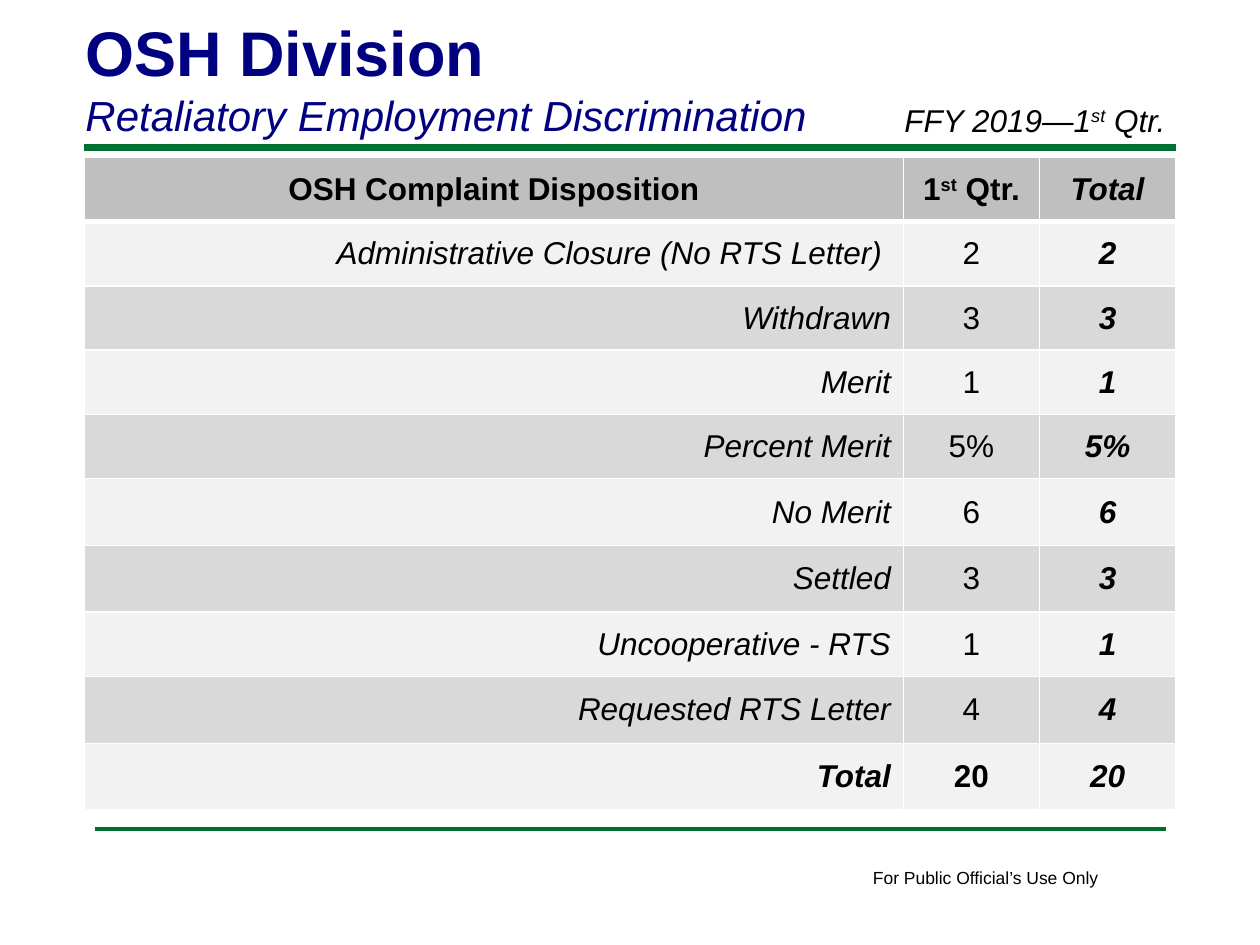
"""Build the OSH Division slide on retaliatory employment discrimination complaints."""
from dataclasses import dataclass
from typing import NamedTuple

from lxml.etree import SubElement
from pptx import Presentation
from pptx.dml.color import RGBColor
from pptx.enum.shapes import MSO_CONNECTOR as Connector
from pptx.enum.text import MSO_ANCHOR as Anchor, MSO_AUTO_SIZE as AutoSize, PP_ALIGN as Align
from pptx.oxml.ns import qn
from pptx.util import Inches, Pt


@dataclass(frozen=True)
class Theme:
    font: str = "Arial"
    black: str = "000000"
    navy: str = "000080"
    green: str = "007030"
    white: str = "FFFFFF"
    header_fill: str = "BFBFBF"
    band_fills: tuple = ("F2F2F2", "D9D9D9")
    title_size: int = 36
    subtitle_size: int = 24
    body_size: int = 18
    footer_size: int = 10
    border: int = 1
    header_border: int = 3


class Style(NamedTuple):
    size: int
    color: str
    bold: bool = False
    italic: bool = False


class Line(NamedTuple):
    style: Style
    runs: tuple


class Rule(NamedTuple):
    left: float
    right: float
    top: float
    width: int


class Box(NamedTuple):
    left: float
    top: float
    width: float
    height: float
    lines: tuple
    wrap: bool = True


class Disposition(NamedTuple):
    label: str
    count: str
    height: float = 0.51
    bold: bool = False


THEME = Theme()
SUPERSCRIPT = "st"
RULES = (Rule(0.67, 9.33, 1.17, 4), Rule(0.75, 9.25, 6.58, 2))
FOOTER = Box(6.83, 6.83, 2.01, 0.27, (
    Line(Style(THEME.footer_size, THEME.black), ("For Public Official’s Use Only",)),
), wrap=False)
TITLE = Box(0.58, 0.06, 8.25, 1.11, (
    Line(Style(THEME.title_size, THEME.navy, bold=True), ("OSH Division",)),
    Line(Style(THEME.subtitle_size, THEME.navy, italic=True), ("Retaliatory Employment Discrimination",)),
))
PERIOD = Box(7.08, 0.75, 2.5, 0.4, (
    Line(Style(THEME.body_size, THEME.black, italic=True), ("FFY 2019—1", SUPERSCRIPT, " Qtr.")),
))
COLUMN_WIDTHS = (6.5, 1.08, 1.08)
HEADER_HEIGHT = 0.51
HEADERS = (("OSH Complaint Disposition",), ("1", SUPERSCRIPT, " Qtr."), ("Total",))
DISPOSITIONS = (
    Disposition("Administrative Closure (No RTS Letter) ", "2"),
    Disposition("Withdrawn", "3"),
    Disposition("Merit", "1"),
    Disposition("Percent Merit", "5%"),
    Disposition("No Merit", "6", 0.53),
    Disposition("Settled", "3", 0.53),
    Disposition("Uncooperative - RTS", "1"),
    Disposition("Requested RTS Letter", "4", 0.53),
    Disposition("Total", "20", 0.53, bold=True),
)


def add_line(paragraph, line: Line) -> None:
    for text in line.runs:
        run = paragraph.add_run()
        run.text = text
        font = run.font
        font.name = THEME.font
        font.size = Pt(line.style.size)
        font.bold = line.style.bold
        font.italic = line.style.italic
        font.color.rgb = RGBColor.from_string(line.style.color)
        if text == SUPERSCRIPT:
            run._r.get_or_add_rPr().set("baseline", "30000")


def add_rule(slide, rule: Rule) -> None:
    connector = slide.shapes.add_connector(
        Connector.STRAIGHT, Inches(rule.left), Inches(rule.top), Inches(rule.right), Inches(rule.top))
    connector.line.color.rgb = RGBColor.from_string(THEME.green)
    connector.line.width = Pt(rule.width)
    SubElement(connector._element.spPr, qn("a:effectLst"))


def add_box(slide, box: Box) -> None:
    shape = slide.shapes.add_textbox(
        Inches(box.left), Inches(box.top), Inches(box.width), Inches(box.height))
    frame = shape.text_frame
    frame.word_wrap = box.wrap
    frame.auto_size = AutoSize.SHAPE_TO_FIT_TEXT
    for index, line in enumerate(box.lines):
        paragraph = frame.add_paragraph() if index else frame.paragraphs[0]
        add_line(paragraph, line)


def set_borders(cell, top: int, bottom: int) -> None:
    properties = cell._tc.get_or_add_tcPr()
    widths = {"a:lnL": THEME.border, "a:lnR": THEME.border, "a:lnT": top, "a:lnB": bottom}
    for tag, width in widths.items():
        border = SubElement(properties, qn(tag), w=str(Pt(width)))
        fill = SubElement(border, qn("a:solidFill"))
        SubElement(fill, qn("a:srgbClr"), val=THEME.white)


def fill_cell(cell, line: Line, align: Align, fill: str, top: int, bottom: int) -> None:
    set_borders(cell, top, bottom)
    cell.fill.solid()
    cell.fill.fore_color.rgb = RGBColor.from_string(fill)
    cell.vertical_anchor = Anchor.MIDDLE
    paragraph = cell.text_frame.paragraphs[0]
    paragraph.alignment = align
    add_line(paragraph, line)


def add_disposition_table(slide) -> None:
    heights = (HEADER_HEIGHT, *(item.height for item in DISPOSITIONS))
    table = slide.shapes.add_table(
        len(heights), len(COLUMN_WIDTHS), Inches(0.67), Inches(1.25),
        Inches(sum(COLUMN_WIDTHS)), Inches(sum(heights))).table
    for column, width in zip(table.columns, COLUMN_WIDTHS):
        column.width = Inches(width)
    for row, height in zip(table.rows, heights):
        row.height = Inches(height)

    for column, runs in enumerate(HEADERS):
        is_total = column == len(HEADERS) - 1
        style = Style(THEME.body_size, THEME.black, bold=True, italic=is_total)
        fill_cell(table.cell(0, column), Line(style, runs), Align.CENTER,
                  THEME.header_fill, THEME.border, THEME.header_border)

    for row, item in enumerate(DISPOSITIONS, start=1):
        fill = THEME.band_fills[(row - 1) % 2]
        top = THEME.header_border if row == 1 else THEME.border
        cells = (
            (item.label, Align.RIGHT, item.bold, True),
            (item.count, Align.CENTER, item.bold, False),
            (item.count, Align.CENTER, True, True),
        )
        for column, (text, align, bold, italic) in enumerate(cells):
            style = Style(THEME.body_size, THEME.black, bold, italic)
            fill_cell(table.cell(row, column), Line(style, (text,)), align, fill, top, THEME.border)


def main() -> None:
    presentation = Presentation()
    presentation.slide_width = Inches(10)
    presentation.slide_height = Inches(7.5)
    slide = presentation.slides.add_slide(presentation.slide_layouts[6])
    for rule in RULES:
        add_rule(slide, rule)
    add_box(slide, FOOTER)
    add_disposition_table(slide)
    add_box(slide, TITLE)
    add_box(slide, PERIOD)
    presentation.save("out.pptx")


if __name__ == "__main__":
    main()
